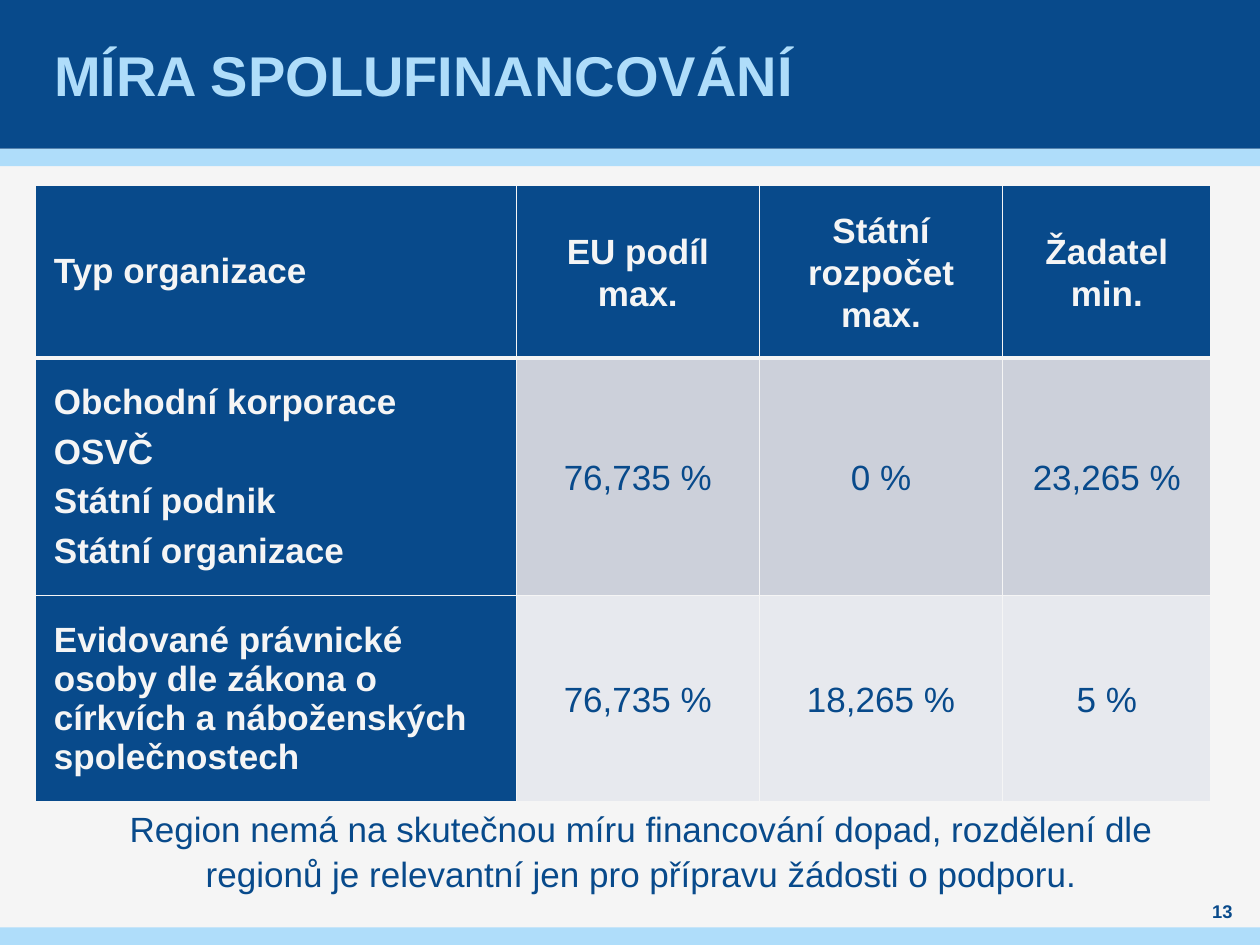
import pptx
import pptx.dml.color
import pptx.enum.shapes
import pptx.enum.text
import pptx.oxml
import pptx.oxml.ns
import pptx.util

Pt = pptx.util.Pt
ALIGN = pptx.enum.text.PP_ALIGN
MIDDLE = pptx.enum.text.MSO_ANCHOR.MIDDLE

COLORS = {
    "navy": "084A8B",
    "sky": "AFDDFA",
    "paper": "F5F5F5",
    "band_dark": "CCD0DA",
    "band_light": "E7E9EE",
}
SLIDE_WIDTH, SLIDE_HEIGHT = 720, 540
HEADER_HEIGHT, STRIPE_HEIGHT = 85, 10
COLUMN_WIDTHS = [275, 139, 139, 119]
ROW_HEIGHTS = [93, 129, 111]
ROW_FILLS = ["navy", "band_dark", "band_light"]
ROWS = [
    ["Typ organizace", "EU podíl max.", "Státní rozpočet max.", "Žadatel min."],
    ["Obchodní korporace\nOSVČ\nStátní podnik\nStátní organizace",
     "76,735 %", "0 %", "23,265 %"],
    ["Evidované právnické osoby dle zákona o církvích a náboženských společnostech",
     "76,735 %", "18,265 %", "5 %"],
]


def rgb(name):
    return pptx.dml.color.RGBColor.from_string(COLORS[name])


def format_paragraph(paragraph, size, color, bold=False, align=ALIGN.LEFT,
                     spacing=1.0, before=0, after=0):
    paragraph.font.name = "Arial"
    paragraph.font.size = Pt(size)
    paragraph.font.bold = bold
    paragraph.font.color.rgb = rgb(color)
    paragraph.alignment = align
    paragraph.line_spacing = spacing
    paragraph.space_before = Pt(before)
    paragraph.space_after = Pt(after)


def set_margins(target, horizontal, vertical):
    target.margin_left = target.margin_right = Pt(horizontal)
    target.margin_top = target.margin_bottom = Pt(vertical)


def add_bar(slide, top, height, color):
    shape = slide.shapes.add_shape(
        pptx.enum.shapes.MSO_SHAPE.RECTANGLE, 0, Pt(top), Pt(SLIDE_WIDTH), Pt(height))
    shape.shadow.inherit = False
    shape.fill.solid()
    shape.fill.fore_color.rgb = rgb(color)
    shape.line.fill.background()


def set_title(slide, text):
    title = slide.shapes.title
    title.left, title.top = Pt(28), Pt(0)
    title.width, title.height = Pt(663), Pt(HEADER_HEIGHT)
    frame = title.text_frame
    frame.text = text
    frame.vertical_anchor = MIDDLE
    set_margins(frame, 3, 0)
    format_paragraph(frame.paragraphs[0], 32, "sky", bold=True)


def add_text(slide, text, left, top, width, height, margins, size, **style):
    frame = slide.shapes.add_textbox(Pt(left), Pt(top), Pt(width), Pt(height)).text_frame
    frame.word_wrap = True
    frame.vertical_anchor = MIDDLE
    frame.text = text
    set_margins(frame, *margins)
    format_paragraph(frame.paragraphs[0], size, "navy", align=ALIGN.CENTER, **style)


def set_borders(cell, widths):
    properties = cell._tc.get_or_add_tcPr()
    namespace = pptx.oxml.ns.nsdecls("a")
    # Border lines come before the fill in the cell properties
    for position, (side, width) in enumerate(widths.items()):
        properties.insert(position, pptx.oxml.parse_xml(
            f'<a:{side} {namespace} w="{Pt(width)}"><a:solidFill>'
            f'<a:srgbClr val="{COLORS["paper"]}"/></a:solidFill></a:{side}>'))


def fill_cell(cell, text, row, column):
    is_label = row == 0 or column == 0
    cell.text = text
    cell.vertical_anchor = MIDDLE
    set_margins(cell, 10.8, 10.8)
    cell.fill.solid()
    cell.fill.fore_color.rgb = rgb("navy" if is_label else ROW_FILLS[row])
    if column:
        layout = {"align": ALIGN.CENTER, "spacing": 1.07, "after": 8}
    elif row:
        layout = {"before": 3, "after": 3}
    else:
        layout = {"after": 8}
    for paragraph in cell.text_frame.paragraphs:
        format_paragraph(paragraph, 20, "paper" if is_label else "navy",
                         bold=is_label, **layout)
    # Thick rule between the header row and the body
    set_borders(cell, {"lnL": 1, "lnR": 1,
                       "lnT": 3 if row == 1 else 1, "lnB": 3 if row == 0 else 1})


def add_rate_table(slide, left, top):
    table = slide.shapes.add_table(
        len(ROWS), len(COLUMN_WIDTHS), Pt(left), Pt(top),
        Pt(sum(COLUMN_WIDTHS)), Pt(sum(ROW_HEIGHTS))).table
    table.horz_banding = False
    for column, width in zip(table.columns, COLUMN_WIDTHS):
        column.width = Pt(width)
    for row, height in zip(table.rows, ROW_HEIGHTS):
        row.height = Pt(height)
    for row, texts in enumerate(ROWS):
        for column, text in enumerate(texts):
            fill_cell(table.cell(row, column), text, row, column)


def main():
    presentation = pptx.Presentation()
    presentation.slide_width = Pt(SLIDE_WIDTH)
    presentation.slide_height = Pt(SLIDE_HEIGHT)
    slide = presentation.slides.add_slide(presentation.slide_layouts[5])
    slide.background.fill.solid()
    slide.background.fill.fore_color.rgb = rgb("paper")

    # Header and footer bars; the title is moved in front of them
    add_bar(slide, HEADER_HEIGHT, STRIPE_HEIGHT, "sky")
    add_bar(slide, 0, HEADER_HEIGHT, "navy")
    add_bar(slide, SLIDE_HEIGHT - STRIPE_HEIGHT, STRIPE_HEIGHT, "sky")
    set_title(slide, "MÍRA SPOLUFINANCOVÁNÍ")
    slide.shapes._spTree.append(slide.shapes.title._element)

    # Slide number, table and closing note
    add_text(slide, "13", 680, 513, 37, 15, (0, 0), 10.5, bold=True)
    add_rate_table(slide, 20, 106)
    add_text(slide, "Region nemá na skutečnou míru financování dopad, rozdělení dle "
             "regionů je relevantní jen pro přípravu žádosti o podporu.",
             35, 458, 663, 55, (7.2, 3.6), 20, spacing=1.07)

    presentation.save("out.pptx")


if __name__ == "__main__":
    main()
